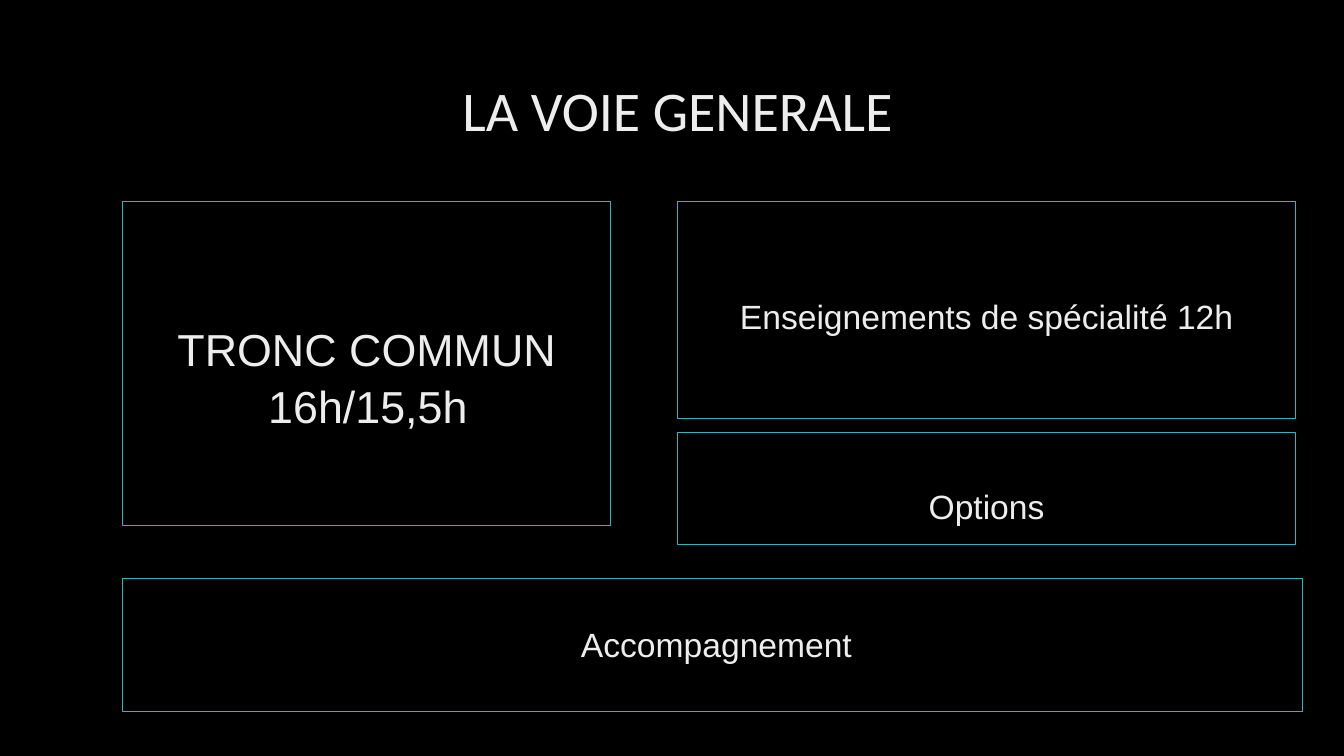
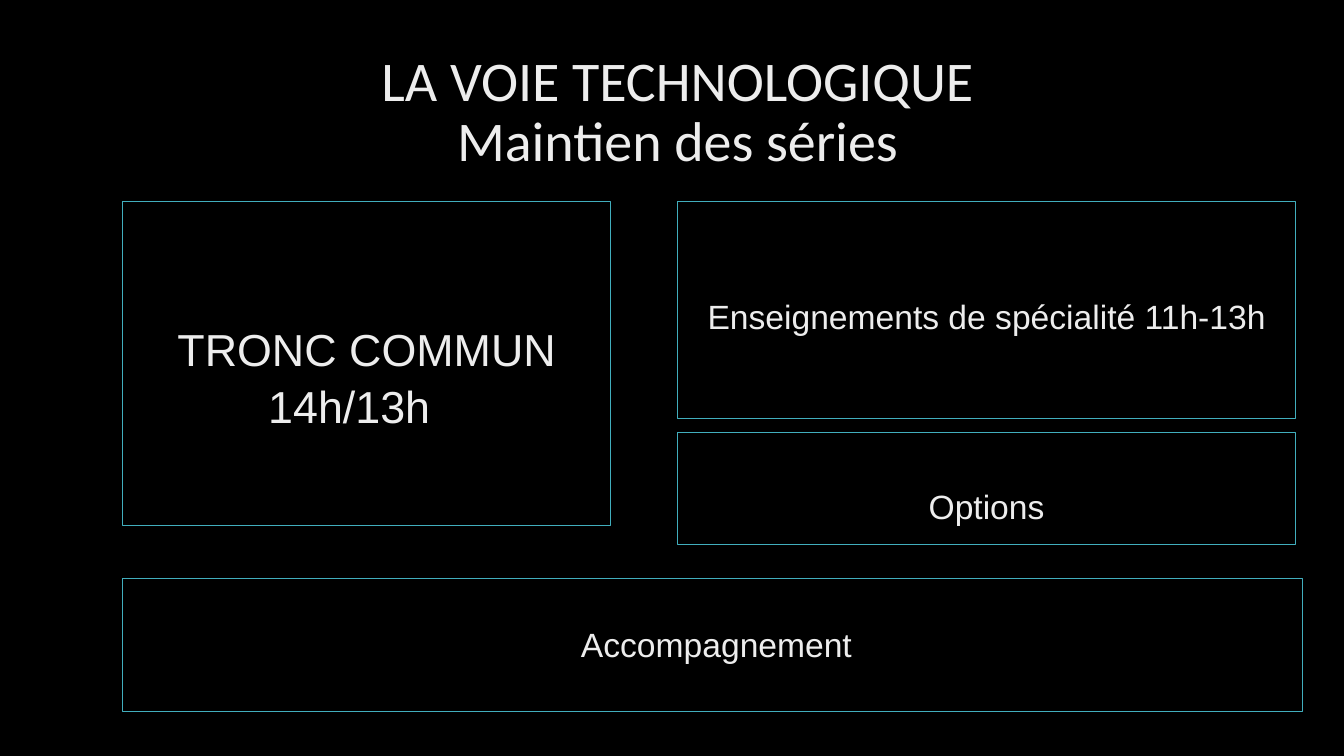
from dataclasses import dataclass

from pptx import Presentation
from pptx.dml.color import RGBColor
from pptx.enum.shapes import MSO_SHAPE
from pptx.enum.text import MSO_ANCHOR, PP_ALIGN
from pptx.slide import Slide
from pptx.util import Inches, Pt

# Shared look
BLACK = RGBColor(0x00, 0x00, 0x00)
LIGHT = RGBColor(0xED, 0xED, 0xED)
TEAL = RGBColor(0x41, 0xAE, 0xBD)
TITLE_FONT, BODY_FONT = "Calibri", "Arial"
LINE_SPACING = 0.9

# Grid, in inches
LEFT, RIGHT_COL = 1.22, 6.72
TOP = 2.0
RIGHT_W = 6.13


@dataclass(frozen=True)
class Line:
    text: str
    indent: float = 0
    space_before: float = 0


@dataclass(frozen=True)
class Box:
    left: float
    top: float
    width: float
    height: float
    lines: tuple[Line, ...]
    inset_top: float
    inset_left: float = 0.1
    size: int = 24
    align: PP_ALIGN = PP_ALIGN.CENTER


@dataclass(frozen=True)
class Track:
    title: str
    core_hours: str
    speciality_hours: str


TRACKS = (
    Track("LA VOIE GENERALE", "16h/15,5h", "12h"),
    Track("LA VOIE TECHNOLOGIQUE\vMaintien des séries", "14h/13h", "11h-13h"),
)


def track_boxes(track: Track) -> tuple[Box, ...]:
    core = (Line("TRONC COMMUN"), Line(track.core_hours, 0.9, 6))
    speciality = (Line(f"Enseignements de spécialité {track.speciality_hours}"),)
    return (
        Box(LEFT, TOP, 4.84, 3.21, core, 1.25, 0.54, 32, PP_ALIGN.LEFT),
        Box(RIGHT_COL, TOP, RIGHT_W, 2.15, speciality, 0.98),
        Box(LEFT, 5.74, 11.7, 1.32, (Line("Accompagnement"),), 0.49, 0.17),
        Box(RIGHT_COL, 4.29, RIGHT_W, 1.11, (Line("Options"),), 0.58),
    )


def style_paragraph(p, font: str, size: int, align: PP_ALIGN) -> None:
    p.alignment = align
    p.line_spacing = LINE_SPACING
    p.font.name = font
    p.font.size = Pt(size)
    p.font.color.rgb = LIGHT


def add_title(s: Slide, text: str) -> None:
    sp = s.shapes.add_textbox(Inches(0.52), Inches(0.4), Inches(12.4), Inches(1.45))
    tf = sp.text_frame
    tf.word_wrap = True
    tf.vertical_anchor = MSO_ANCHOR.MIDDLE
    p = tf.paragraphs[0]
    p.text = text
    style_paragraph(p, TITLE_FONT, 40, PP_ALIGN.CENTER)


def add_box(s: Slide, box: Box) -> None:
    sp = s.shapes.add_shape(MSO_SHAPE.RECTANGLE, Inches(box.left), Inches(box.top),
                            Inches(box.width), Inches(box.height))
    sp.shadow.inherit = False
    sp.fill.background()
    sp.line.color.rgb = TEAL
    sp.line.width = Pt(0.75)

    tf = sp.text_frame
    tf.word_wrap = True
    tf.vertical_anchor = MSO_ANCHOR.TOP
    tf.margin_top = Inches(box.inset_top)
    tf.margin_left = Inches(box.inset_left)
    for i, line in enumerate(box.lines):
        p = tf.add_paragraph() if i else tf.paragraphs[0]
        p.text = line.text
        style_paragraph(p, BODY_FONT, box.size, box.align)
        if line.space_before:
            p.space_before = Pt(line.space_before)
        if line.indent:
            p._p.get_or_add_pPr().set("marL", str(Inches(line.indent)))


def main() -> None:
    prs = Presentation()
    prs.slide_width, prs.slide_height = Inches(13.33), Inches(7.5)

    # Black background on the master
    fill = prs.slide_master.background.fill
    fill.solid()
    fill.fore_color.rgb = BLACK

    # One slide per track
    for track in TRACKS:
        s = prs.slides.add_slide(prs.slide_layouts[6])
        add_title(s, track.title)
        for box in track_boxes(track):
            add_box(s, box)

    prs.save("out.pptx")


if __name__ == "__main__":
    main()
